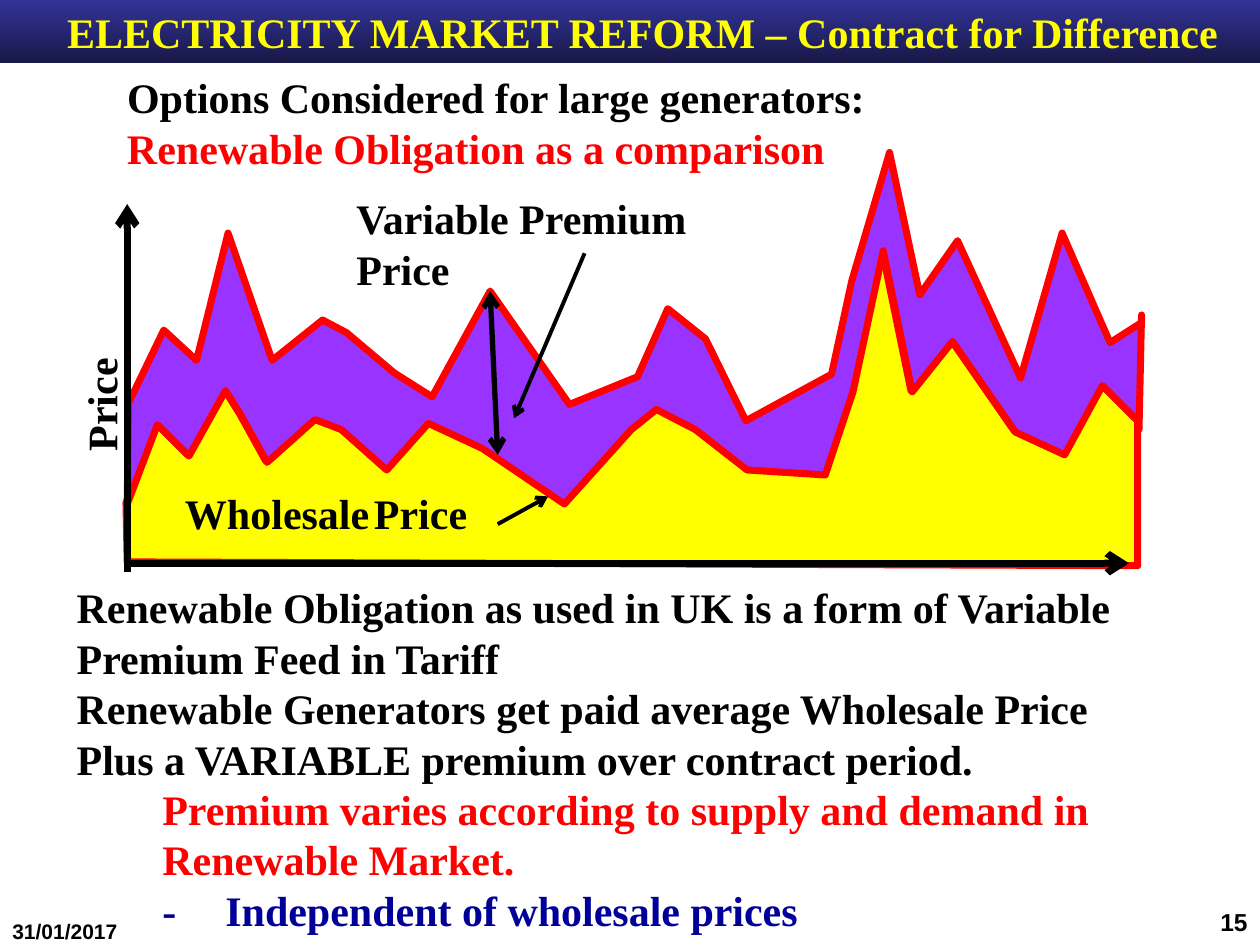
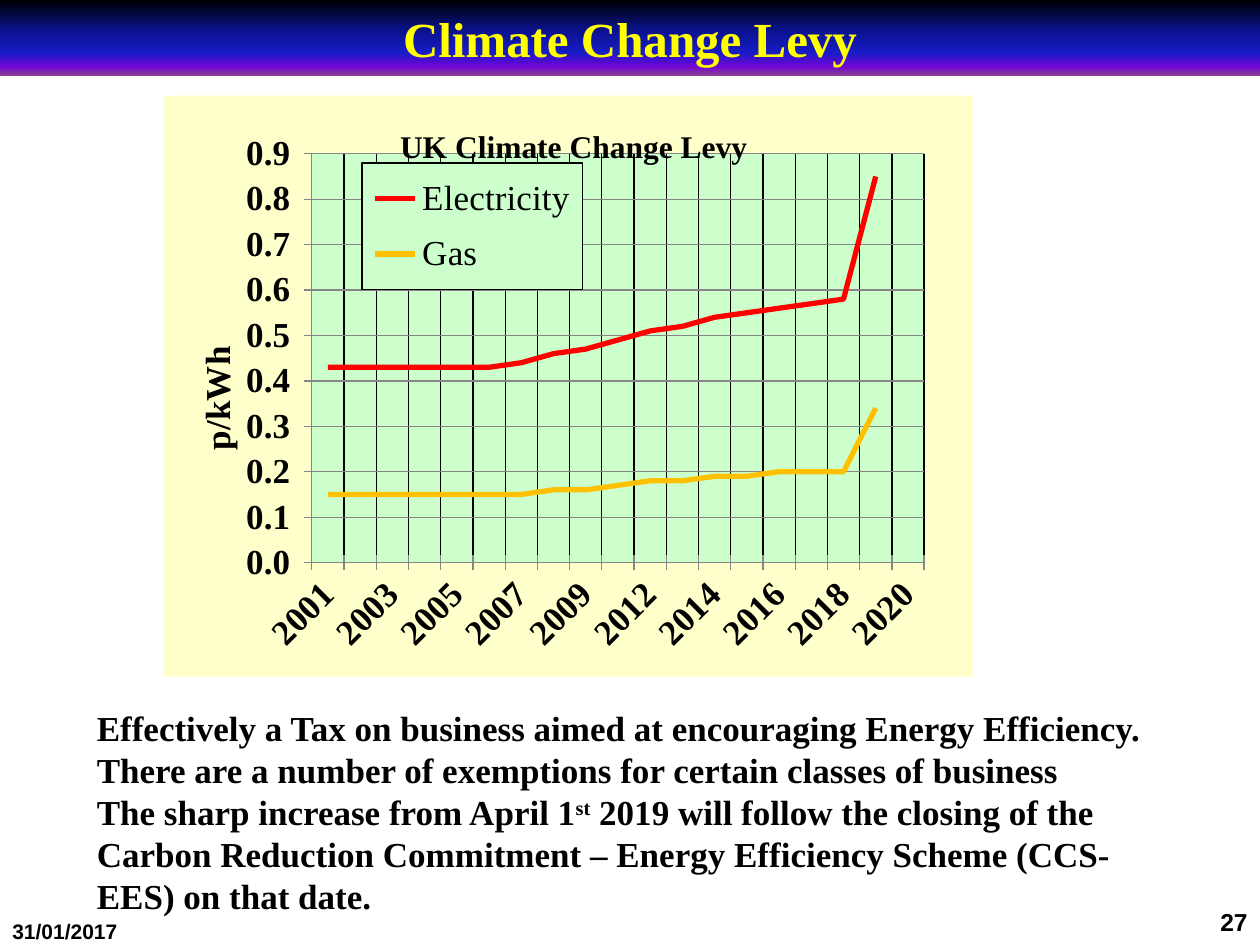
from lxml import etree
from pptx import Presentation
from pptx.chart.data import CategoryChartData
from pptx.dml.color import RGBColor
from pptx.enum.chart import XL_CHART_TYPE, XL_LEGEND_POSITION, XL_TICK_MARK
from pptx.enum.shapes import MSO_CONNECTOR, MSO_SHAPE
from pptx.enum.text import MSO_ANCHOR, PP_ALIGN
from pptx.oxml import parse_xml
from pptx.oxml.ns import nsdecls, qn
from pptx.util import Pt

PX = 9144  # 100 px to the inch
LEFT, MID, RIGHT = PP_ALIGN.LEFT, PP_ALIGN.CENTER, PP_ALIGN.RIGHT
CENTRE = MSO_ANCHOR.MIDDLE
RECT, STRAIGHT = MSO_SHAPE.RECTANGLE, MSO_CONNECTOR.STRAIGHT
LINE, KEY, CROSS = XL_CHART_TYPE.LINE, XL_LEGEND_POSITION.RIGHT, XL_TICK_MARK.CROSS
BLACK, RED, YELLOW, NAVY = "000000", "FF0000", "FFFF00", "000099"
PURPLE, GREY, GOLD, CREAM, MINT = "9933FF", "868686", "FFC000", "FFFFCC", "CCFFCC"
SERIF, SANS = "Times New Roman", "Arial"


def px(*nums):
    return [n * PX for n in nums]


def rgb(code):
    return RGBColor.from_string(code)


def put(obj, vals):
    for name, val in vals.items():
        setattr(obj, name, val)


def ink(font, size, color=BLACK, bold=True, face=SERIF):
    put(font, {"size": Pt(size), "bold": bold, "name": face})
    font.color.rgb = rgb(color)


def pen(line, color, width):
    line.color.rgb = rgb(color)
    line.width = Pt(width)


def paint(fill, line=None):
    """Shape properties for a chart part."""
    solid = '<a:solidFill><a:srgbClr val="%s"/></a:solidFill>'
    edge = solid % line if line else "<a:noFill/>"
    return parse_xml(f'<c:spPr {nsdecls("c", "a")}>{solid % fill}'
                     f'<a:ln w="9525">{edge}</a:ln></c:spPr>')


def place(part, inner=False, **spots):
    """Fix a chart part at fractions of the chart."""
    for old in part.findall(qn("c:layout")):
        part.remove(old)
    vals = {"layoutTarget": "inner"} if inner else {}
    vals.update({"xMode": "edge", "yMode": "edge"}, **spots)
    body = "".join(f'<c:{k} val="{v}"/>' for k, v in vals.items())
    node = parse_xml(f'<c:layout {nsdecls("c")}><c:manualLayout>{body}'
                     '</c:manualLayout></c:layout>')
    over = part.find(qn("c:overlay"))
    if over is None:
        part.insert(0, node)
    else:
        over.addprevious(node)


class Deck:
    def __init__(self):
        self.file = Presentation()
        self.file.slide_width, self.file.slide_height = px(1000, 750)

    def new(self):
        self.page = self.file.slides.add_slide(self.file.slide_layouts[6]).shapes

    def fill(self, frame, paras, size, color=BLACK, align=LEFT, face=SERIF):
        """Each paragraph is a string or a dict; "^" sets off raised text."""
        for i, item in enumerate(paras):
            item = {"text": item} if isinstance(item, str) else item
            para = frame.paragraphs[0] if i == 0 else frame.add_paragraph()
            para.alignment = align
            props = para._p.get_or_add_pPr()
            left, first = item.get("ind", (0, 0))
            props.set("marL", str(left * PX))
            props.set("indent", str(first * PX))
            if "tab" in item:
                tabs = etree.SubElement(props, qn("a:tabLst"))
                etree.SubElement(tabs, qn("a:tab"), pos=str(item["tab"] * PX), algn="l")
            for j, part in enumerate(item["text"].split("^")):
                run = para.add_run()
                run.text = part
                ink(run.font, size, item.get("color", color), face=face)
                if j % 2:
                    run.font._element.set("baseline", "30000")

    def text(self, box, paras, size=24, wrap=True, turn=0, **style):
        shape = self.page.add_textbox(*px(*box))
        shape.rotation = turn
        shape.text_frame.word_wrap = wrap
        self.fill(shape.text_frame, paras, size, **style)

    def band(self, wide, high, title, size, stops):
        shape = self.page.add_shape(RECT, *px(0, 0, wide, high))
        shape.shadow.inherit = False
        shape.line.fill.background()
        shape.fill.gradient()
        shape.fill.gradient_angle = 270
        grad = shape._element.spPr.find(qn("a:gradFill"))
        steps = grad.find(qn("a:gsLst"))
        for old in list(steps):
            steps.remove(old)
        for pos, color in stops:
            step = etree.SubElement(steps, qn("a:gs"), pos=str(pos * 1000))
            etree.SubElement(step, qn("a:srgbClr"), val=color)
        shape.text_frame.vertical_anchor = CENTRE
        self.fill(shape.text_frame, [title], size, YELLOW, MID)

    def area(self, spots, color):
        path = self.page.build_freeform(*spots[0], scale=PX)
        path.add_line_segments(spots[1:], close=True)
        shape = path.convert_to_shape()
        shape.shadow.inherit = False
        shape.fill.solid()
        shape.fill.fore_color.rgb = rgb(color)
        pen(shape.line, RED, 4)

    def arrow(self, ends, width, tips=("tailEnd",)):
        line = self.page.add_connector(STRAIGHT, *px(*ends))
        pen(line.line, BLACK, width)
        for tip in tips:
            etree.SubElement(line.line._get_or_add_ln(), qn("a:" + tip), type="arrow")
        etree.SubElement(line._element.spPr, qn("a:effectLst"))

    def foot(self, num):
        self.text((0, 724, 233, 52), ["31/01/2017"], 12, face=SANS)
        self.text((767, 715, 233, 52), [num], 14, align=RIGHT, face=SANS)

    def chart(self, box, title, unit, cats, rows):
        data = CategoryChartData()
        data.categories = cats
        for name, vals, _ in rows:
            data.add_series(name, vals)
        chart = self.page.add_chart(LINE, *px(*box), data).chart
        ink(chart.font, 10, bold=False)
        space = chart._chartSpace
        space.chart.addnext(paint(CREAM))
        plot = space.chart.plotArea
        place(plot, True, x=0.183, y=0.1, w=0.757, h=0.704)
        plot.append(paint(MINT))

        # Titles
        chart.has_title = True
        axis = chart.value_axis
        for head, words, size, x, y in ((chart.chart_title, title, 18, 0.285, 0.045),
                                        (axis.axis_title, unit, 20, 0.03, 0.42)):
            head.text_frame.text = words
            ink(head.text_frame.paragraphs[0].runs[0].font, size)
            place(head._element, x=x, y=y)
        chart.chart_title._element.find(qn("c:overlay")).set("val", "1")
        turn = axis.axis_title.text_frame._txBody.bodyPr
        turn.set("rot", "-5400000")
        turn.set("vert", "horz")

        # Axes
        put(axis, {"minimum_scale": 0, "maximum_scale": 0.9, "major_unit": 0.1})
        put(axis.tick_labels, {"number_format": r"#,##0.0_ ;[Red]\-#,##0.0\ ",
                               "number_format_is_linked": False})
        years = chart.category_axis
        for each, grid in ((axis, GREY), (years, BLACK)):
            put(each, {"has_major_gridlines": True, "major_tick_mark": CROSS})
            pen(each.major_gridlines.format.line, grid, 0.75)
            pen(each.format.line, GREY, 0.75)
            ink(each.tick_labels.font, 20)
        years._element.find(qn("c:txPr")).find(qn("a:bodyPr")).set("rot", "-2700000")
        last = years._element.find(qn("c:noMultiLvlLbl"))
        for tag, step in (("tickLblSkip", "2"), ("tickMarkSkip", "1")):
            node = parse_xml(f'<c:{tag} {nsdecls("c")} val="{step}"/>')
            last.addprevious(node)

        # Legend
        chart.has_legend = True
        put(chart.legend, {"position": KEY, "include_in_layout": False})
        ink(chart.legend.font, 20, bold=False)
        key = chart.legend._element
        place(key, x=0.245, y=0.116, w=0.273, h=0.218)
        key.find(qn("c:overlay")).addnext(paint(MINT, BLACK))

        # Series
        chart.plots[0].vary_by_categories = False
        for row, (_, _, color) in zip(chart.plots[0].series, rows):
            row.smooth = False
            row.marker.style = None
            row.marker._element.get_or_add_marker().get_or_add_symbol().set("val", "none")
            pen(row.format.line, color, 3)


def market(deck):
    deck.new()
    deck.text((51, 457, 849, 293), [
        "Renewable Obligation as used in UK is a form of Variable Premium Feed in Tariff",
        "Renewable Generators get paid average Wholesale Price Plus a VARIABLE premium "
        "over contract period.",
        {"text": "Premium varies according to supply and demand in Renewable Market.",
         "color": RED, "ind": (68, 0)},
        {"text": "-\tIndependent of wholesale prices", "color": NAVY,
         "ind": (68, 0), "tab": 96}])

    # Price areas: the premium sits on the wholesale edge
    low = [(100, 399), (124, 336), (149, 361), (178, 309), (190, 328), (211, 366),
           (249, 332), (270, 340), (306, 372), (339, 335), (382, 355), (447, 399),
           (500, 340), (520, 324), (551, 340), (592, 372), (654, 376), (676, 310),
           (700, 198), (723, 310), (755, 270), (805, 342), (844, 360), (874, 305),
           (889, 320), (903, 334)]
    top = [(904, 341), (906, 250), (906, 256), (881, 272), (843, 185), (810, 300),
           (760, 191), (730, 234), (706, 121), (676, 223), (660, 297), (592, 334),
           (560, 269), (530, 245), (506, 299), (452, 321), (389, 231), (343, 315),
           (313, 296), (275, 264), (256, 254), (216, 286), (181, 185), (156, 286),
           (130, 262), (102, 320)]
    deck.area(low + [(903, 449), (101, 446)], YELLOW)
    deck.area([(x + 1, y + 1) for x, y in low] + top, PURPLE)

    # Labels, axes and arrows
    deck.text((137, 382, 310, 50), [{"text": "Wholesale\tPrice", "tab": 171}])
    deck.arrow((395, 416, 435, 394), 2.25)
    deck.arrow((101, 454, 101, 162), 4)
    deck.arrow((101, 447, 896, 447), 4)
    deck.text((-17, 246, 194, 50), ["Price"], turn=270)
    deck.text((91, 92, 693, 51), [{"text": "Renewable Obligation as a comparison",
                                   "color": RED, "ind": (40, -40)}])
    deck.text((273, 148, 389, 50), [{"text": "Variable Premium\tPrice", "tab": 279}])
    deck.arrow((464, 201, 408, 332), 2.25)
    deck.arrow((389, 231, 395, 361), 3, ("headEnd", "tailEnd"))

    deck.foot("15")
    deck.band(1020, 50, "ELECTRICITY MARKET REFORM – Contract for Difference", 24,
              [(0, "333399"), (100, "181848")])
    deck.text((91, 52, 628, 50), [{"text": "Options Considered for large generators:",
                                   "ind": (40, -40)}], wrap=False)


def levy(deck):
    deck.new()
    deck.band(1000, 60, "Climate Change Levy", 28,
              [(0, "000000"), (40, "0A128C"), (70, "181CC7"), (88, "7005D4"),
               (100, "8C3D91")])
    years = [str(y) for y in range(2001, 2021) if y != 2010]
    power = [0.43] * 6 + [0.44, 0.46, 0.47, 0.49, 0.51, 0.52, 0.54, 0.55, 0.56,
                          0.57, 0.58, 0.85, None]
    gas = [0.15] * 7 + [0.16, 0.16, 0.17, 0.18, 0.18, 0.19, 0.19, 0.2, 0.2, 0.2,
                        0.34, None]
    deck.chart((130, 76, 642, 461), "UK Climate Change Levy", "p/kWh", years,
               [("Electricity", power, RED), ("Gas", gas, GOLD)])
    deck.text((67, 556, 866, 178), [
        "Effectively a Tax on business aimed at encouraging Energy Efficiency. "
        "There are a number of exemptions for certain classes of business",
        "The sharp increase from April 1^st^ 2019 will follow the closing of the Carbon "
        "Reduction Commitment – Energy Efficiency Scheme (CCS-EES) on that date."], 20)
    deck.foot("27")


def main():
    deck = Deck()
    market(deck)
    levy(deck)
    deck.file.save("out.pptx")


if __name__ == "__main__":
    main()
